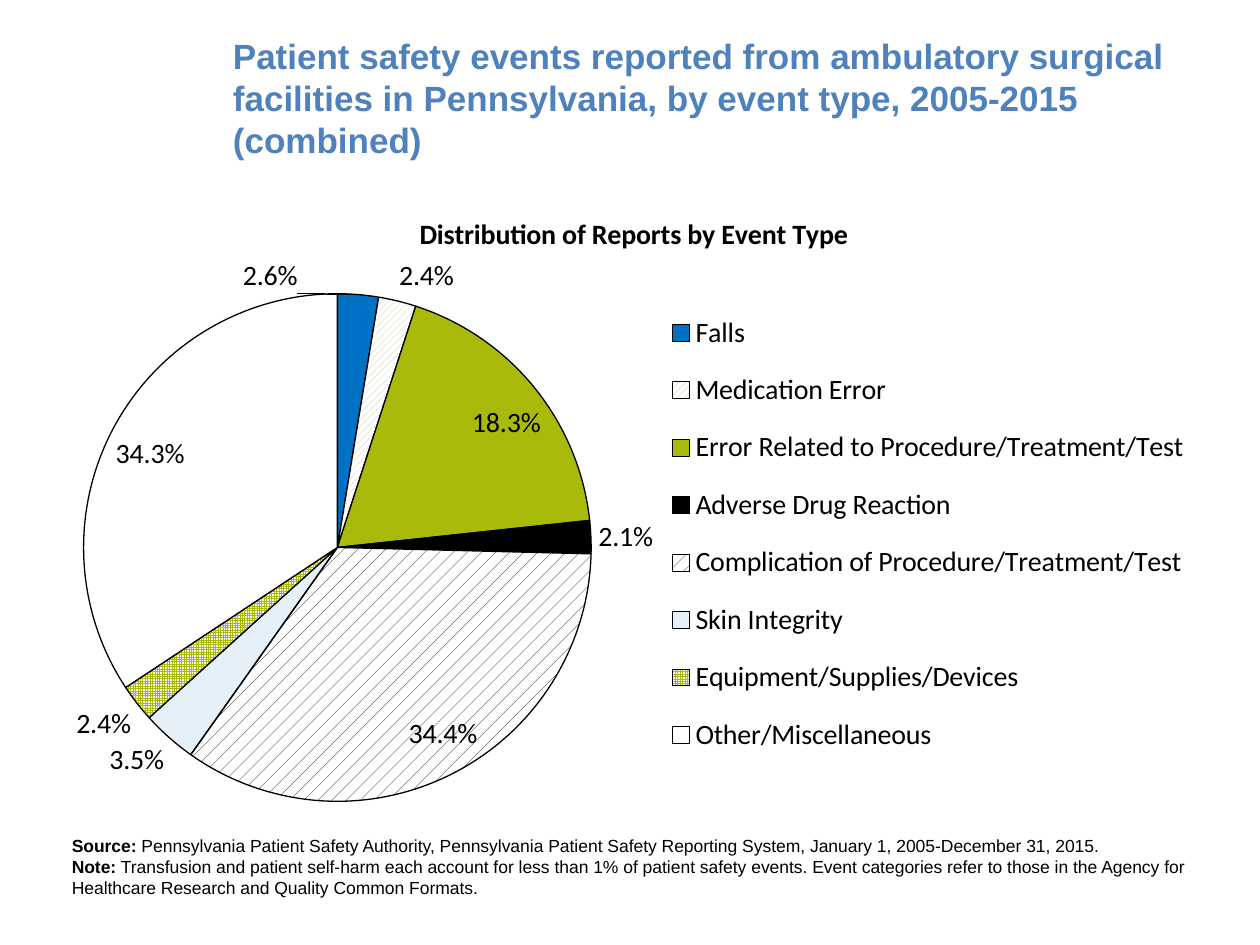
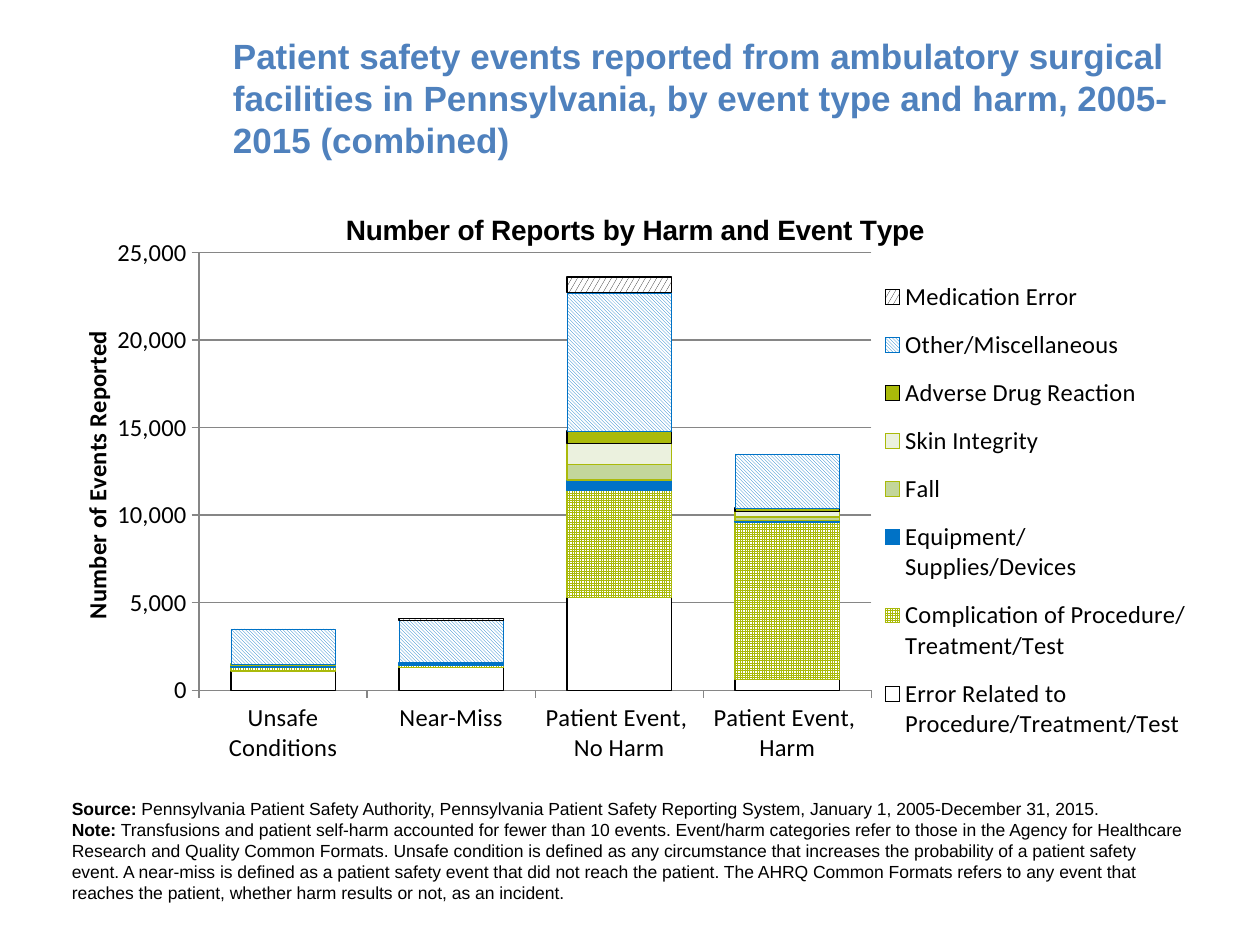
"""Build two slides on patient safety events in ambulatory surgical facilities."""

from dataclasses import dataclass
from typing import NamedTuple, Optional

from lxml.etree import SubElement
from pptx import Presentation
from pptx.chart.chart import Chart
from pptx.chart.data import CategoryChartData
from pptx.dml.color import RGBColor
from pptx.enum.chart import (
    XL_CHART_TYPE,
    XL_DATA_LABEL_POSITION,
    XL_LEGEND_POSITION,
    XL_TICK_MARK,
)
from pptx.enum.dml import MSO_PATTERN
from pptx.enum.text import MSO_ANCHOR
from pptx.oxml import parse_xml
from pptx.oxml.ns import nsdecls, qn
from pptx.slide import Slide
from pptx.text.text import Font, TextFrame
from pptx.util import Emu, Pt

EMU_PER_PX = 9144
COLORS = {
    "title": "4F81BD",
    "black": "000000",
    "white": "FFFFFF",
    "blue": "0072C6",
    "lime": "AABA0A",
    "tan": "C4BD97",
    "sage": "C3D69B",
    "mist": "EBF1DE",
    "grid": "868686",
}
HEADING_FONT = "Arial"
CHART_FONT = "Calibri"
SOURCE = (
    "Pennsylvania Patient Safety Authority, Pennsylvania Patient Safety "
    "Reporting System, January 1, 2005-December 31, 2015."
)


class Box(NamedTuple):
    """A rectangle in px, at 100 px to the inch."""

    left: int
    top: int
    width: int
    height: int

    def emu(self) -> list[Emu]:
        """Return the four lengths in EMU."""
        return [Emu(length * EMU_PER_PX) for length in self]


class Layout(NamedTuple):
    """A place in percent of its chart, with a size if it has one."""

    x: float
    y: float
    w: Optional[float] = None
    h: Optional[float] = None


@dataclass(frozen=True)
class Paint:
    """The fill and outline of a pie slice or a column series."""

    color: str
    pattern: Optional[MSO_PATTERN] = None
    opacity: int = 100
    line: str = "black"
    line_width: float = 0.75


@dataclass(frozen=True)
class EventType:
    """One event type with its values and its paint."""

    name: str
    values: tuple[float, ...]
    paint: Paint


@dataclass(frozen=True)
class ChartFrame:
    """Where a chart and its parts sit, and how it is titled."""

    box: Box
    title: str
    title_font: str
    title_place: Layout
    plot: Layout
    legend: Layout
    legend_size: int
    legend_overlay: bool


TITLE_BOX = Box(175, 30, 775, 95)
GRID = MSO_PATTERN.SMALL_GRID

PIE_FRAME = ChartFrame(
    Box(50, 160, 900, 498), "Distribution of Reports by Event Type", CHART_FONT,
    Layout(31, 1.3), Layout(1.8, 14.7, 44.8, 80.9), Layout(53.3, 14.5, 46, 77), 16, True,
)
FALLS_LABEL_SHIFT = Layout(-7.8, 1)
PIE_EVENTS = (
    EventType("Falls", (0.026,), Paint("blue")),
    EventType("Medication Error", (0.024,),
              Paint("tan", MSO_PATTERN.WIDE_UPWARD_DIAGONAL)),
    EventType("Error Related to Procedure/Treatment/Test", (0.183,), Paint("lime")),
    EventType("Adverse Drug Reaction", (0.021,), Paint("black")),
    EventType("Complication of Procedure/Treatment/Test", (0.344,),
              Paint("black", MSO_PATTERN.PERCENT_10)),
    EventType("Skin Integrity", (0.035,), Paint("blue", opacity=10)),
    EventType("Equipment/Supplies/Devices", (0.024,), Paint("lime", GRID)),
    EventType("Other/Miscellaneous", (0.343,), Paint("white")),
)

COLUMN_FRAME = ChartFrame(
    Box(50, 160, 900, 450), "Number of Reports by Harm and Event Type", HEADING_FONT,
    Layout(24.5, 1), Layout(12, 9, 59.3, 77.2), Layout(72, 11, 27.5, 87), 14, False,
)
VALUE_TITLE_PLACE = Layout(1.1, 22)
HARM_LEVELS = (
    "Unsafe Conditions", "Near-Miss", "Patient Event, \nNo Harm", "Patient Event, \nHarm",
)
COLUMN_EVENTS = (
    EventType("Error Related to Procedure/Treatment/Test",
              (1100, 1300, 5300, 600), Paint("white")),
    EventType("Complication of Procedure/\nTreatment/Test",
              (200, 100, 6100, 9000), Paint("lime", GRID, line="lime")),
    EventType("Equipment/\nSupplies/Devices",
              (100, 200, 600, 100), Paint("blue", line="blue")),
    EventType("Fall", (0, 0, 900, 200), Paint("sage", line="lime")),
    EventType("Skin Integrity", (100, 0, 1200, 300), Paint("mist", line="lime")),
    EventType("Adverse Drug Reaction", (0, 0, 700, 200), Paint("lime")),
    EventType("Other/Miscellaneous", (2000, 2400, 7900, 3100),
              Paint("blue", MSO_PATTERN.LIGHT_DOWNWARD_DIAGONAL,
                    line="blue", line_width=0.25)),
    EventType("Medication Error", (0, 100, 900, 0),
              Paint("black", MSO_PATTERN.LARGE_CONFETTI)),
)


def rgb(name: str) -> RGBColor:
    """Return the named colour."""
    return RGBColor.from_string(COLORS[name])


def style_font(font: Font, size: int, name: str, color: str = "black",
               bold: bool = False) -> None:
    """Set the look of a font."""
    font.size, font.name, font.bold = Pt(size), name, bold
    font.color.rgb = rgb(color)


def add_text_frame(slide: Slide, box: Box) -> TextFrame:
    """Add a wrapping text box and return its text frame."""
    text_frame = slide.shapes.add_textbox(*box.emu()).text_frame
    text_frame.word_wrap = True
    return text_frame


def add_title(slide: Slide, text: str) -> None:
    """Add the slide title."""
    text_frame = add_text_frame(slide, TITLE_BOX)
    text_frame.vertical_anchor = MSO_ANCHOR.MIDDLE
    text_frame.text = text
    style_font(text_frame.paragraphs[0].runs[0].font, 20, HEADING_FONT, "title", True)


def add_footer(slide: Slide, box: Box, note: str) -> None:
    """Add the source and the note under the chart."""
    text_frame = add_text_frame(slide, box)
    text_frame.margin_left, text_frame.margin_right = Emu(7 * EMU_PER_PX), Emu(8 * EMU_PER_PX)
    text_frame.margin_top = text_frame.margin_bottom = Emu(4 * EMU_PER_PX)
    entries = (("Source:", SOURCE), ("Note:", note))
    text_frame.text = "\n".join(label for label, _ in entries)
    for paragraph, (_, text) in zip(text_frame.paragraphs, entries):
        paragraph.add_run().text = f" {text}"
        for run, bold in zip(paragraph.runs, (True, False)):
            style_font(run.font, 10, HEADING_FONT, bold=bold)


def apply_paint(part, paint: Paint) -> None:
    """Fill and outline a chart point or series."""
    fill, line = part.format.fill, part.format.line
    if paint.pattern is None:
        fill.solid()
        fill.fore_color.rgb = rgb(paint.color)
    else:
        fill.patterned()
        fill.pattern = paint.pattern
        fill.fore_color.rgb = rgb(paint.color)
        fill.back_color.rgb = rgb("white")
    line.color.rgb = rgb(paint.line)
    line.width = Pt(paint.line_width)


def place(chart: Chart, parent: str, after: str, layout: Layout,
          edge: bool = True, inner: bool = False) -> None:
    """Give a chart part a manual layout, as an edge position or as a shift."""
    part = chart.element.xpath(f".//{parent}")[0]
    for old in part.xpath("c:layout"):
        part.remove(old)
    element = parse_xml(f"<c:layout {nsdecls('c')}><c:manualLayout/></c:layout>")
    settings = {"layoutTarget": "inner"} if inner else {}
    if edge:
        settings |= {"xMode": "edge", "yMode": "edge"}
    settings |= {tag: f"{percent / 100:.3f}" for tag, percent in layout._asdict().items()
                 if percent is not None}
    for tag, value in settings.items():
        SubElement(element[0], qn(f"c:{tag}")).set("val", value)
    part.insert(len(part.xpath(after)) if after else 0, element)


def add_chart(slide: Slide, kind: XL_CHART_TYPE, data: CategoryChartData,
              frame: ChartFrame) -> Chart:
    """Add a chart with its title, plot area and legend in place."""
    chart = slide.shapes.add_chart(kind, *frame.box.emu(), data).chart
    style_font(chart.font, 10, HEADING_FONT)
    chart.has_title = True
    title = chart.chart_title.text_frame
    title.text = frame.title
    style_font(title.paragraphs[0].runs[0].font, 16, frame.title_font, bold=True)
    chart.has_legend = True
    chart.legend.position = XL_LEGEND_POSITION.RIGHT
    chart.legend.include_in_layout = frame.legend_overlay
    style_font(chart.legend.font, frame.legend_size, CHART_FONT)
    place(chart, "c:chart/c:title", "c:tx", frame.title_place)
    place(chart, "c:plotArea", "", frame.plot, inner=True)
    place(chart, "c:legend", "c:legendPos", frame.legend)
    return chart


def add_pie(slide: Slide) -> None:
    """Add the pie of event types."""
    data = CategoryChartData(number_format="0.0%")
    data.categories = [event.name for event in PIE_EVENTS]
    data.add_series("Series 1", [event.values[0] for event in PIE_EVENTS])
    chart = add_chart(slide, XL_CHART_TYPE.PIE, data, PIE_FRAME)
    chart.plots[0].vary_by_categories = True
    series = chart.plots[0].series[0]
    for index, event in enumerate(PIE_EVENTS):
        apply_paint(series.points[index], event.paint)
        if event.paint.opacity < 100:
            color = chart.element.xpath(
                f".//c:dPt[c:idx/@val='{index}']/c:spPr/a:solidFill/a:srgbClr")[0]
            SubElement(color, qn("a:alpha")).set("val", str(event.paint.opacity * 1000))
    labels = series.data_labels
    labels.show_value = True
    labels.number_format, labels.number_format_is_linked = "0.0%", False
    falls_label = series.points[0].data_label
    for label in (labels, falls_label):
        label.position = XL_DATA_LABEL_POSITION.BEST_FIT
        style_font(label.font, 16, CHART_FONT)
    place(chart, "c:dLbl", "c:idx", FALLS_LABEL_SHIFT, edge=False)


def add_columns(slide: Slide) -> None:
    """Add the stacked columns of event types by harm."""
    data = CategoryChartData(number_format="#,##0")
    data.categories = HARM_LEVELS
    for event in COLUMN_EVENTS:
        data.add_series(event.name, event.values)
    chart = add_chart(slide, XL_CHART_TYPE.COLUMN_STACKED, data, COLUMN_FRAME)
    plot = chart.plots[0]
    plot.gap_width, plot.overlap, plot.vary_by_categories = 61, 100, False
    for series, event in zip(plot.series, COLUMN_EVENTS):
        apply_paint(series, event.paint)
    value_axis = chart.value_axis
    for axis in (chart.category_axis, value_axis):
        axis.major_tick_mark = XL_TICK_MARK.OUTSIDE
        axis.format.line.color.rgb = rgb("grid")
        style_font(axis.tick_labels.font, 14, CHART_FONT)
    value_axis.minimum_scale, value_axis.maximum_scale = 0, 25000
    value_axis.major_unit = 5000
    value_axis.tick_labels.number_format = "#,##0"
    value_axis.tick_labels.number_format_is_linked = False
    value_axis.major_gridlines.format.line.color.rgb = rgb("grid")
    title = value_axis.axis_title.text_frame
    title.text = "Number of Events Reported"
    style_font(title.paragraphs[0].runs[0].font, 14, CHART_FONT, bold=True)
    chart.element.xpath(".//c:valAx/c:title//a:bodyPr")[0].set("rot", "-5400000")
    place(chart, "c:valAx/c:title", "c:tx", VALUE_TITLE_PLACE)


def main() -> None:
    """Build and save the presentation."""
    presentation = Presentation()
    presentation.slide_width, presentation.slide_height = Box(0, 0, 1000, 750).emu()[2:]
    pages = (
        ("by event type, 2005-2015 (combined)", add_pie, Box(50, 659, 900, 58),
         "Transfusion and patient self-harm each account for less than 1% of patient "
         "safety events. Event categories refer to those in the Agency for Healthcare "
         "Research and Quality Common Formats."),
        ("by event type and harm, 2005-2015 (combined)", add_columns,
         Box(50, 629, 900, 92),
         "Transfusions and patient self-harm accounted for fewer than 10 events. "
         "Event/harm categories refer to those in the Agency for Healthcare Research and "
         "Quality Common Formats. Unsafe condition is defined as any circumstance that "
         "increases the probability of a patient safety event. A near-miss is defined as "
         "a patient safety event that did not reach the patient. The AHRQ Common Formats "
         "refers to any event that reaches the patient, whether harm results or not, as "
         "an incident."),
    )
    for subject, draw_chart, footer_box, note in pages:
        slide = presentation.slides.add_slide(presentation.slide_layouts[6])
        add_title(slide, "Patient safety events reported from ambulatory surgical "
                         f"facilities in Pennsylvania, {subject}")
        draw_chart(slide)
        add_footer(slide, footer_box, note)
    presentation.save("out.pptx")


if __name__ == "__main__":
    main()
